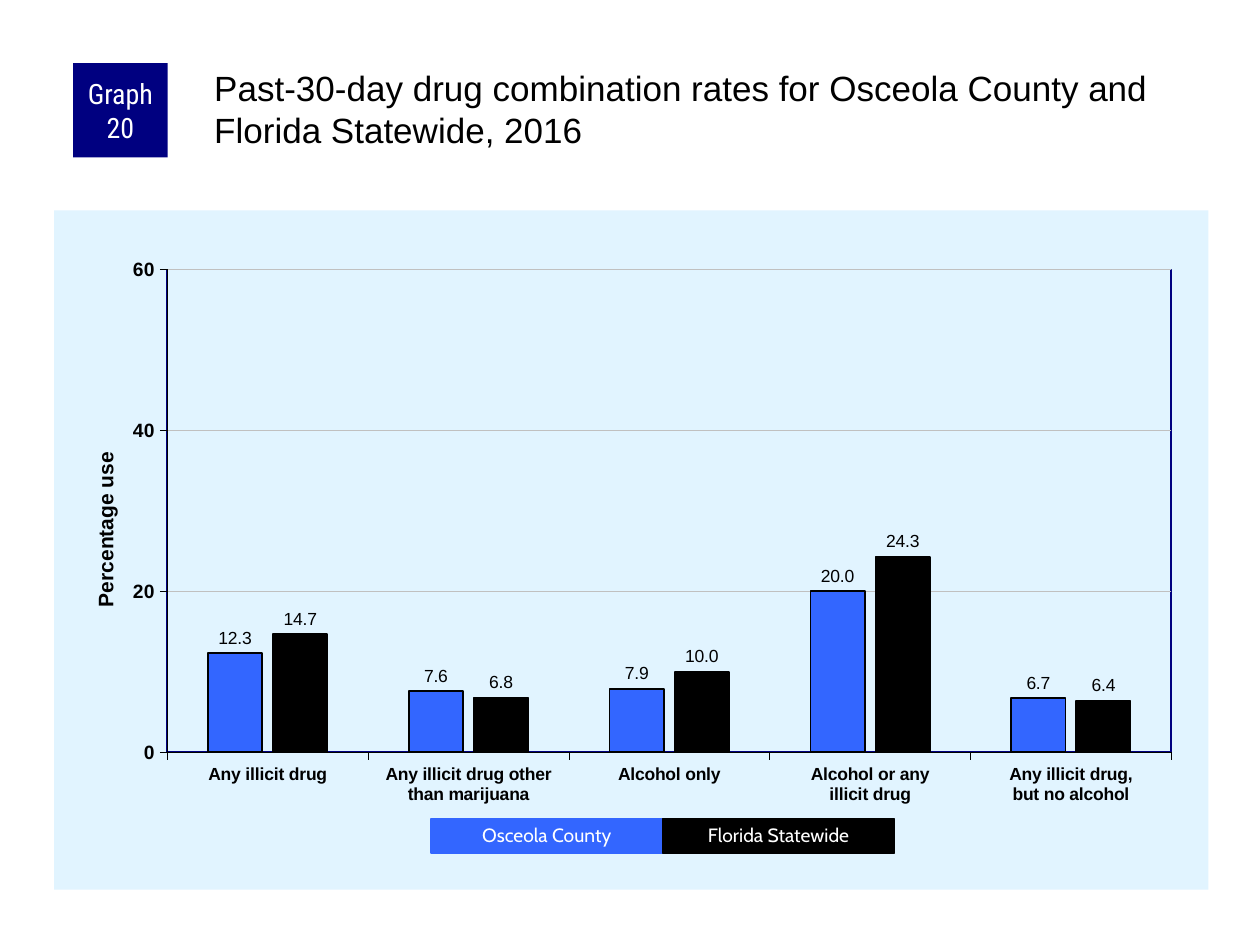
from dataclasses import dataclass
from typing import Optional

from lxml.etree import fromstring
from pptx import Presentation
from pptx.chart.data import CategoryChartData as ChartData
from pptx.dml.color import RGBColor as RGB
from pptx.enum.chart import XL_CHART_TYPE as Kind, XL_LABEL_POSITION as Spot
from pptx.enum.chart import XL_TICK_MARK as Tick
from pptx.enum.shapes import MSO_SHAPE as Form
from pptx.enum.text import MSO_ANCHOR as Anchor, MSO_AUTO_SIZE as Fit, PP_ALIGN as Align
from pptx.util import Inches, Pt

NS = ('xmlns:c="http://schemas.openxmlformats.org/drawingml/2006/chart" '
      'xmlns:a="http://schemas.openxmlformats.org/drawingml/2006/main"')


@dataclass(frozen=True)
class Theme:
    ink: str = "000000"
    white: str = "FFFFFF"
    navy: str = "000080"
    blue: str = "3366FF"
    pale: str = "E1F4FF"
    grid: str = "C0C0C0"
    sans: str = "Arial"
    badge: str = "Roboto Condensed"
    key: str = "Cabin"
    head_pt: float = 20
    badge_pt: float = 16
    title_pt: float = 12
    axis_pt: float = 11
    label_pt: float = 10


THEME = Theme()


@dataclass(frozen=True)
class Box:
    text: str
    left: float
    top: float
    width: float
    height: float
    fill: str
    font: str
    size: float
    line: Optional[str] = None
    inset: tuple = (0.1, 0.05)
    space: Optional[float] = None
    grow: bool = False


@dataclass(frozen=True)
class Group:
    name: str
    color: str
    rates: tuple


GROUPS = (
    Group("Osceola County", THEME.blue, (12.3, 7.6, 7.9, 20, 6.7)),
    Group("Florida Statewide", THEME.ink, (14.7, 6.8, 10, 24.3, 6.4)),
)
DRUGS = ("Any illicit drug", "Any illicit drug other than marijuana", "Alcohol only",
         "Alcohol or any\nillicit drug", "Any illicit drug,\nbut no alcohol")


def style(font, face: str, size: float, color: str = THEME.ink, bold: bool = False) -> None:
    font.name, font.size, font.bold = face, Pt(size), bold
    font.color.rgb = RGB.from_string(color)


def stroke(line, color: str, width: float) -> None:
    line.color.rgb = RGB.from_string(color)
    line.width = Pt(width)


def paint(fill, color: str) -> None:
    fill.solid()
    fill.fore_color.rgb = RGB.from_string(color)


def place(shape, left: float, top: float, width: float, height: float) -> None:
    shape.left, shape.top = Inches(left), Inches(top)
    shape.width, shape.height = Inches(width), Inches(height)


def draw_box(slide, box: Box) -> None:
    shape = slide.shapes.add_shape(Form.RECTANGLE, 0, 0, 0, 0)
    place(shape, box.left, box.top, box.width, box.height)
    shape.shadow.inherit = False
    paint(shape.fill, box.fill)
    if box.line:
        stroke(shape.line, box.line, 0.75)
    else:
        shape.line.fill.background()
    frame = shape.text_frame
    frame.word_wrap = True
    frame.vertical_anchor = Anchor.MIDDLE
    frame.margin_left = frame.margin_right = Inches(box.inset[0])
    frame.margin_top = frame.margin_bottom = Inches(box.inset[1])
    if box.grow:
        frame.auto_size = Fit.SHAPE_TO_FIT_TEXT
    para = frame.paragraphs[0]
    para.text, para.alignment = box.text, Align.CENTER
    para.line_spacing = box.space
    style(para.font, box.font, box.size, THEME.white)


def layout(x: float, y: float, w: float = 0, h: float = 0):
    """Manual chart layout; a size marks the inner plot area."""
    inner = '<c:layoutTarget val="inner"/>' if w else ""
    size = f'<c:w val="{w}"/><c:h val="{h}"/>' if w else ""
    return fromstring(
        f'<c:layout {NS}><c:manualLayout>{inner}<c:xMode val="edge"/><c:yMode val="edge"/>'
        f'<c:x val="{x}"/><c:y val="{y}"/>{size}</c:manualLayout></c:layout>')


def frame_xml(fill: str, line: str):
    return fromstring(f'<c:spPr {NS}>{fill}<a:ln w="12700">{line}</a:ln></c:spPr>')


def solid(color: str) -> str:
    return f'<a:solidFill><a:srgbClr val="{color}"/></a:solidFill>'


def set_layout(node, new) -> None:
    for old in node.xpath("c:layout"):
        node.remove(old)
    text = node.xpath("c:tx")
    if text:
        text[0].addnext(new)
    else:
        node.insert(0, new)


def draw_chart(slide) -> None:
    data = ChartData(number_format="0.0")
    data.categories = DRUGS
    for group in GROUPS:
        data.add_series(group.name, group.rates)
    chart = slide.shapes.add_chart(
        Kind.COLUMN_CLUSTERED, Inches(0.43), Inches(1.67), Inches(9.16), Inches(5.39), data).chart
    chart.has_legend = chart.has_title = False
    style(chart.font, THEME.sans, 11.5)

    # Bars and their labels
    plot = chart.plots[0]
    plot.gap_width, plot.overlap, plot.vary_by_categories = 150, -20, False
    for bars, group in zip(plot.series, GROUPS):
        paint(bars.format.fill, group.color)
        stroke(bars.format.line, THEME.ink, 1)
        labels = bars.data_labels
        labels.show_value = True
        labels.number_format, labels.number_format_is_linked = "0.0", False
        labels.position = Spot.OUTSIDE_END
        style(labels.font, THEME.sans, THEME.label_pt)

    # Axes
    rates, drugs = chart.value_axis, chart.category_axis
    for axis, size in ((rates, THEME.axis_pt), (drugs, THEME.label_pt)):
        axis.major_tick_mark, axis.minor_tick_mark = Tick.OUTSIDE, Tick.NONE
        style(axis.tick_labels.font, THEME.sans, size, bold=True)
        stroke(axis.format.line, THEME.ink, 0.25)
    rates.minimum_scale, rates.maximum_scale, rates.major_unit = 0, 60, 20
    rates.tick_labels.number_format = "0"
    rates.tick_labels.number_format_is_linked = False
    stroke(rates.major_gridlines.format.line, THEME.grid, 0.25)
    title = rates.axis_title
    title.text_frame.text = "Percentage use"
    style(title.text_frame.paragraphs[0].font, THEME.sans, THEME.title_pt, bold=True)

    # Plot frame, background and fixed positions
    space = chart.element
    area = space.xpath("c:chart/c:plotArea")[0]
    set_layout(area, layout(0.098, 0.087, 0.87, 0.711))
    set_layout(area.xpath("c:valAx/c:title")[0], layout(0.03, 0.35))
    area.append(frame_xml("<a:noFill/>", solid(THEME.navy)))
    space.xpath("c:chart")[0].addnext(frame_xml(solid(THEME.pale), "<a:noFill/>"))


def draw_head(slide) -> None:
    head = slide.shapes.title
    place(head, 1.67, 0.5, 7.92, 0.83)
    frame = head.text_frame
    frame.text = "Past-30-day drug combination rates for Osceola County and Florida Statewide, 2016"
    frame.word_wrap, frame.auto_size = True, Fit.NONE
    frame.vertical_anchor = Anchor.TOP
    frame.margin_left = frame.margin_top = Inches(0.03)
    frame.margin_right = frame.margin_bottom = 0
    para = frame.paragraphs[0]
    para.alignment = Align.LEFT
    style(para.font, THEME.sans, THEME.head_pt)


def main() -> None:
    deck = Presentation()
    deck.slide_width, deck.slide_height = Inches(10), Inches(7.5)
    slide = deck.slides.add_slide(deck.slide_layouts[5])
    draw_chart(slide)
    draw_head(slide)
    draw_box(slide, Box("Graph 20", 0.58, 0.5, 0.75, 0.75, THEME.navy, THEME.badge,
                        THEME.badge_pt, inset=(0.05, 0)))
    # Colour key
    wide = 1.84
    for i, group in enumerate(GROUPS):
        draw_box(slide, Box(group.name, 3.42 + i * wide, 6.5, wide, 0.27, group.color, THEME.key,
                            THEME.axis_pt, line=group.color, space=0.9, grow=True))
    deck.save("out.pptx")


if __name__ == "__main__":
    main()
